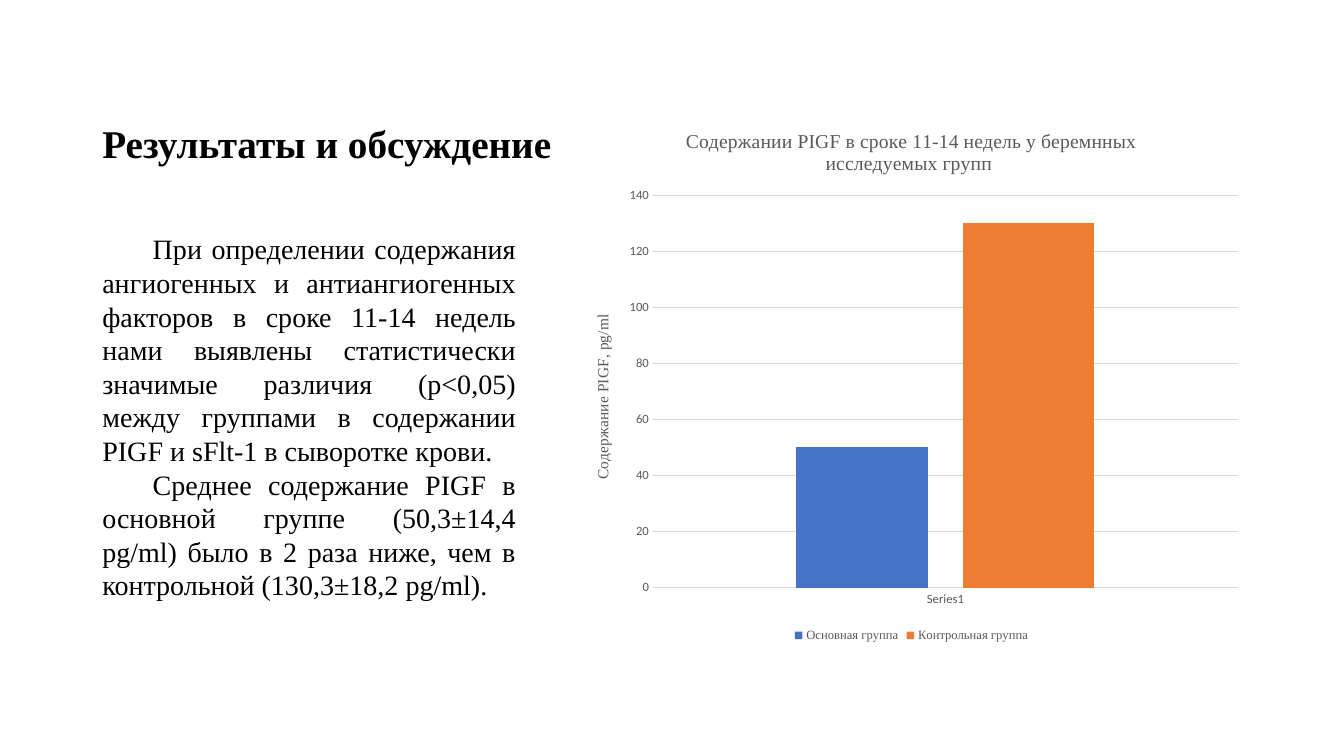
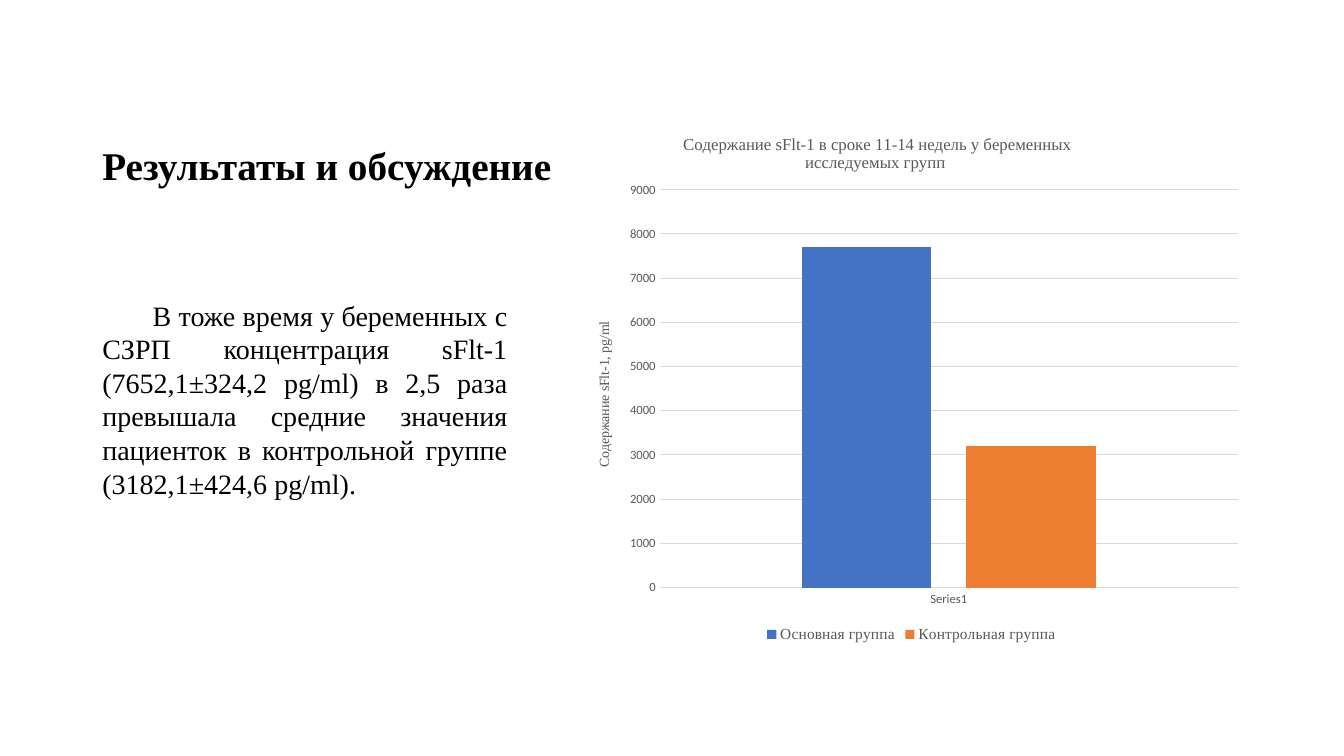
import pptx
import pptx.chart.data
import pptx.dml.color
import pptx.enum.chart
import pptx.enum.text
import pptx.oxml
import pptx.oxml.ns
import pptx.util

Pt = pptx.util.Pt
RGB = pptx.dml.color.RGBColor
BLACK = RGB(0x00, 0x00, 0x00)
GRAY = RGB(0x59, 0x59, 0x59)
GRID_GRAY = RGB(0xD9, 0xD9, 0xD9)
BLUE = RGB(0x44, 0x72, 0xC4)
ORANGE = RGB(0xED, 0x7D, 0x31)
SERIF = "Times New Roman"
SANS = "Calibri"
COLUMNS, ROWS = 160, 90
LEFT = 11
GROUPS = [("Основная группа", BLUE), ("Контрольная группа", ORANGE)]


class Deck:
    def __init__(self):
        self.presentation = pptx.Presentation()
        self.presentation.slide_width = pptx.util.Inches(13.33)
        self.presentation.slide_height = pptx.util.Inches(7.5)
        self.slide = None

    def new_slide(self):
        self.slide = self.presentation.slides.add_slide(self.presentation.slide_layouts[6])

    def place(self, column, row, columns, rows):
        across = self.presentation.slide_width / COLUMNS
        down = self.presentation.slide_height / ROWS
        return [round(n) for n in (column * across, row * down, columns * across, rows * down)]

    def style(self, font, size, color, face=SERIF, bold=False):
        font.name, font.size, font.bold = face, Pt(size), bold
        font.color.rgb = color

    def frame(self, area, anchor):
        frame = self.slide.shapes.add_textbox(*self.place(*area)).text_frame
        frame.word_wrap = True
        frame.vertical_anchor = anchor
        return frame

    def title(self, text, rows):
        frame = self.frame((LEFT, 13, 57, rows), pptx.enum.text.MSO_ANCHOR.MIDDLE)
        paragraph = frame.paragraphs[0]
        paragraph.line_spacing = 0.9
        run = paragraph.add_run()
        run.text = text
        self.style(run.font, 28, BLACK, bold=True)

    def body(self, texts, area, anchor):
        frame = self.frame(area, anchor)
        for index, text in enumerate(texts):
            paragraph = frame.add_paragraph() if index else frame.paragraphs[0]
            paragraph.alignment = pptx.enum.text.PP_ALIGN.JUSTIFY
            paragraph.line_spacing = Pt(24)
            paragraph._p.get_or_add_pPr().set("indent", str(pptx.util.Inches(0.5)))
            run = paragraph.add_run()
            run.text = text
            self.style(run.font, 20, BLACK)

    def caption(self, owner, lines, size):
        frame = owner.text_frame
        for index, line in enumerate(lines):
            paragraph = frame.add_paragraph() if index else frame.paragraphs[0]
            run = paragraph.add_run()
            run.text = line
            self.style(run.font, size, GRAY)

    def layout(self, element, inner=False, **shares):
        for old in element.findall(pptx.oxml.ns.qn("c:layout")):
            element.remove(old)
        target = '<c:layoutTarget val="inner"/>' if inner else ""
        modes = "".join(f'<c:{key}Mode val="edge"/>' for key in "xy")
        sizes = "".join(f'<c:{key} val="{value}"/>' for key, value in shares.items())
        xml = (f'<c:layout {pptx.oxml.ns.nsdecls("c")}><c:manualLayout>'
               f'{target}{modes}{sizes}</c:manualLayout></c:layout>')
        element.insert(0 if inner else 1, pptx.oxml.parse_xml(xml))

    def column_chart(self, heading, heading_size, measure, measure_size, values,
                     top, step, legend_size, plot_at, heading_at=None):
        data = pptx.chart.data.CategoryChartData()
        data.categories = ["Series1"]
        for (group, _), value in zip(GROUPS, values):
            data.add_series(group, [value])
        chart = self.slide.shapes.add_chart(
            pptx.enum.chart.XL_CHART_TYPE.COLUMN_CLUSTERED,
            *self.place(68, 13, 81, 64), data).chart
        self.style(chart.font, 10, BLACK, SANS)

        chart.has_title = True
        self.caption(chart.chart_title, heading, heading_size)
        chart.chart_title.include_in_layout = False
        if heading_at:
            self.layout(chart.chart_title._element, **heading_at)

        chart.has_legend = True
        chart.legend.position = pptx.enum.chart.XL_LEGEND_POSITION.BOTTOM
        chart.legend.include_in_layout = False
        self.style(chart.legend.font, legend_size, GRAY)

        for axis in (chart.category_axis, chart.value_axis):
            axis.major_tick_mark = pptx.enum.chart.XL_TICK_MARK.NONE
            axis.minor_tick_mark = pptx.enum.chart.XL_TICK_MARK.NONE
            self.style(axis.tick_labels.font, 9, GRAY, SANS)
        scale = chart.value_axis
        scale.minimum_scale, scale.maximum_scale, scale.major_unit = 0, top, step
        scale.format.line.fill.background()
        scale.has_title = True
        self.caption(scale.axis_title, [measure], measure_size)
        for line in (chart.category_axis.format.line, scale.major_gridlines.format.line):
            line.color.rgb = GRID_GRAY
            line.width = Pt(0.75)

        plot = chart.plots[0]
        plot.gap_width, plot.overlap = 219, -27
        plot.vary_by_categories = False
        for series, (_, color) in zip(plot.series, GROUPS):
            series.format.fill.solid()
            series.format.fill.fore_color.rgb = color
        plot_area = chart._chartSpace.chart.plotArea
        self.layout(plot_area, inner=True, **plot_at)


def main():
    deck = Deck()
    heading = "Результаты и обсуждение"

    deck.new_slide()
    deck.title(heading, 8.75)
    deck.body(
        ["При определении содержания ангиогенных и антиангиогенных факторов в сроке "
         "11-14 недель нами выявлены статистически значимые различия (p<0,05) между "
         "группами в содержании PIGF и sFlt-1 в сыворотке крови. ",
         "Среднее содержание PIGF в основной группе (50,3±14,4 pg/ml) было в 2 раза "
         "ниже, чем в контрольной (130,3±18,2 pg/ml). "],
        (LEFT, 27, 51.6, 50), pptx.enum.text.MSO_ANCHOR.TOP)
    deck.column_chart(
        ["Содержании PIGF в сроке 11-14 недель у беремнных", "исследуемых групп "], 14,
        "Содержание PIGF, pg/ml", 11, (50, 130), 140, 20, 9,
        dict(x=0.12, y=0.16, w=0.86, h=0.73))

    deck.new_slide()
    deck.title(heading, 14)
    deck.body(
        ["В тоже время у беременных с СЗРП концентрация sFlt-1 (7652,1±324,2 pg/ml) "
         "в 2,5 раза превышала средние значения пациенток в контрольной группе "
         "(3182,1±424,6 pg/ml). "],
        (LEFT, 30, 50.6, 35), pptx.enum.text.MSO_ANCHOR.MIDDLE)
    deck.column_chart(
        ["Содержание sFlt-1 в сроке 11-14 недель у беременных", "исследуемых групп "], 12,
        "Содержание sFlt-1, pg/ml", 10, (7700, 3200), 9000, 1000, 11,
        dict(x=0.13, y=0.15, w=0.85, h=0.74), dict(x=0.16, y=0.04))

    deck.presentation.save("out.pptx")


if __name__ == "__main__":
    main()
